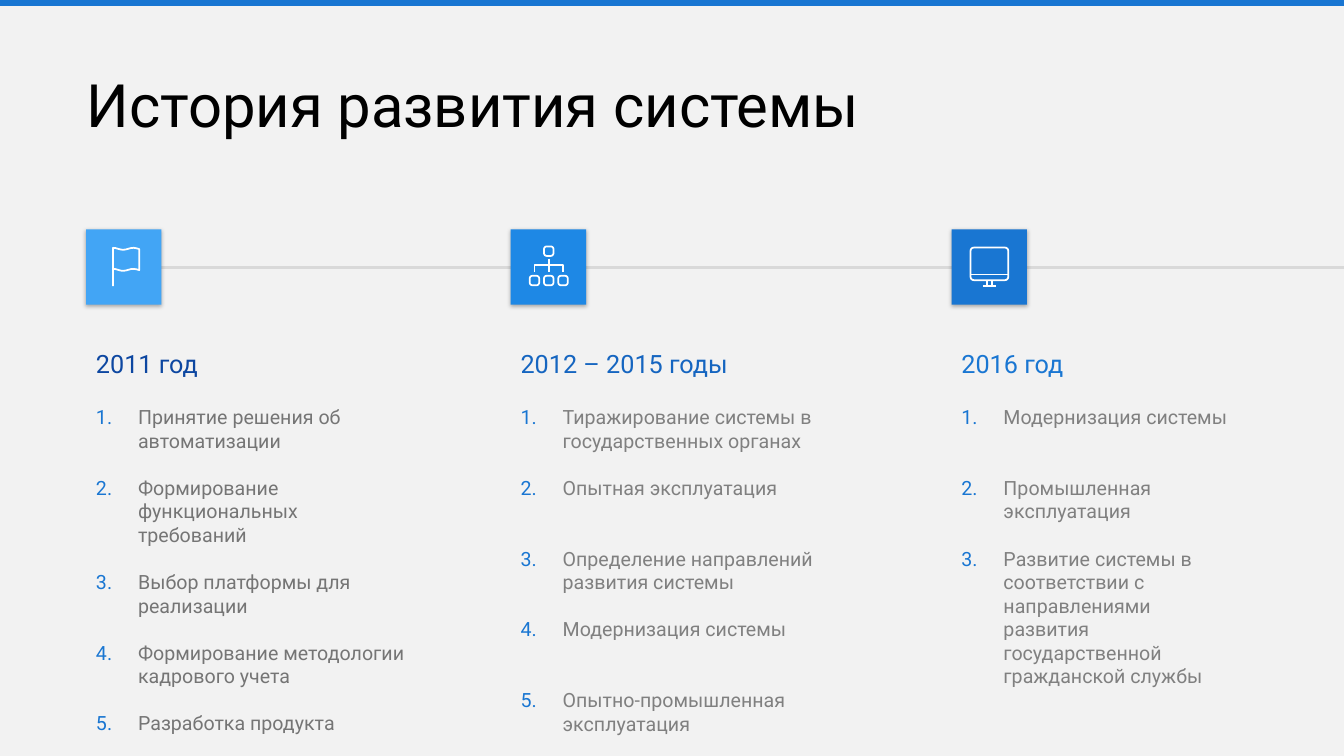
from math import cos, pi, sin

from lxml.etree import SubElement
from pptx import Presentation
from pptx.dml.color import RGBColor
from pptx.enum.shapes import MSO_CONNECTOR, MSO_SHAPE
from pptx.enum.text import MSO_ANCHOR, MSO_AUTO_SIZE, PP_ALIGN
from pptx.oxml.ns import qn
from pptx.util import Cm, Pt

COLORS = {
    "background": "F2F2F2", "bar": "1976D2", "title": "000000", "line": "D9D9D9",
    "number": "1976D2", "icon": "FFFFFF", "shadow": "000000",
}
TILE_TOP, TILE_SIZE = 5.78, 1.9
LINE_GAP = 16.9  # points, one empty line between list items


def write(paragraph, text, size, fill, space_before=0, numbered=False):
    paragraph.alignment = PP_ALIGN.LEFT
    paragraph.space_before = Pt(space_before)
    run = paragraph.add_run()
    run.text = text
    run.font.name = "Roboto"
    run.font.size = Pt(size)
    run.font.color.rgb = RGBColor.from_string(fill)
    if numbered:
        properties = paragraph._p.get_or_add_pPr()
        properties.set("marL", str(Cm(1.06)))
        properties.set("indent", str(-Cm(1.06)))
        number_color = SubElement(properties, qn("a:buClr"))
        SubElement(number_color, qn("a:srgbClr"), val=COLORS["number"])
        SubElement(properties, qn("a:buAutoNum"), type="arabicPeriod")


def rounded_box(left, top, width, height, radius):
    """Points of a closed box with round corners."""
    points = []
    for corner, (across, down) in enumerate([(1, 1), (0, 1), (0, 0), (1, 0)]):
        center_x = left + radius + across * (width - 2 * radius)
        center_y = top + radius + down * (height - 2 * radius)
        for step in range(5):
            angle = (corner + step / 4) * pi / 2
            points.append((center_x + radius * cos(angle), center_y + radius * sin(angle)))
    return points + points[:1]


# Icons: lists of strokes, in cm from the corner of the tile
wave = [(0.68 + 0.066 * step, 0.49 - 0.025 * cos(0.26 * pi * step)) for step in range(11)]
flag_icon = [[(0.68, 1.43)] + wave + [(x, y + 0.53) for x, y in reversed(wave)]]
chart_icon = [
    rounded_box(0.84, 0.43, 0.24, 0.24, 0.07),
    *[rounded_box(0.48 + 0.36 * index, 1.17, 0.24, 0.24, 0.07) for index in range(3)],
    [(0.6, 1.08), (0.6, 0.89), (1.32, 0.89), (1.32, 1.08)],
    [(0.96, 0.74), (0.96, 1.08)],
]
monitor_icon = [
    rounded_box(0.48, 0.46, 0.95, 0.82, 0.08),
    [(0.48, 1.14), (1.43, 1.14)],
    [(0.89, 1.28), (0.89, 1.42)],
    [(1.02, 1.28), (1.02, 1.42)],
    [(0.79, 1.42), (1.12, 1.42)],
]

# Stages: each item is (empty lines above, text)
stages = [
    {
        "left": 2.17, "tile": "42A5F5", "icon": flag_icon,
        "heading": "2011 год", "heading_color": "0D47A1", "heading_width": 3.18,
        "list_size": (8.36, 8.6), "list_color": "757575",
        "items": [
            (0, "Принятие решения об автоматизации"),
            (1, "Формирование функциональных требований"),
            (1, "Выбор платформы для реализации"),
            (1, "Формирование методологии кадрового учета"),
            (1, "Разработка продукта"),
        ],
    },
    {
        "left": 12.87, "tile": "1E88E5", "icon": chart_icon,
        "heading": "2012 – 2015 годы", "heading_color": "1565C0", "heading_width": 5.89,
        "list_size": (7.95, 8.6), "list_color": "808080",
        "items": [
            (0, "Тиражирование системы в государственных органах"),
            (1, "Опытная эксплуатация"),
            (2, "Определение направлений развития системы"),
            (1, "Модернизация системы"),
            (2, "Опытно-промышленная эксплуатация"),
        ],
    },
    {
        "left": 23.98, "tile": "1976D2", "icon": monitor_icon,
        "heading": "2016 год", "heading_color": "1976D2", "heading_width": 3.18,
        "list_size": (7.54, 7.4), "list_color": "808080",
        "items": [
            (0, "Модернизация системы"),
            (2, "Промышленная эксплуатация"),
            (1, "Развитие системы в соответствии с направлениями развития "
                "государственной гражданской службы"),
        ],
    },
]

presentation = Presentation()
presentation.slide_width, presentation.slide_height = Cm(33.87), Cm(19.05)
slide = presentation.slides.add_slide(presentation.slide_layouts[5])
slide.background.fill.solid()
slide.background.fill.fore_color.rgb = RGBColor.from_string(COLORS["background"])
shapes = slide.shapes

# Top bar
bar = shapes.add_shape(MSO_SHAPE.RECTANGLE, 0, 0, Cm(33.87), Cm(0.15))
bar.shadow.inherit = False
bar.fill.solid()
bar.fill.fore_color.rgb = RGBColor.from_string(COLORS["bar"])
bar.line.fill.background()

# Title
title = shapes.title
title.left, title.top, title.width, title.height = Cm(1.93), Cm(1.57), Cm(25.81), Cm(2.06)
title.text_frame.auto_size = MSO_AUTO_SIZE.NONE
title.text_frame.vertical_anchor = MSO_ANCHOR.TOP
write(title.text_frame.paragraphs[0], "История развития системы", 42.7, COLORS["title"])

# Timeline
timeline = shapes.add_connector(MSO_CONNECTOR.STRAIGHT, Cm(4.06), Cm(6.74), Cm(33.87), Cm(6.74))
timeline.line.color.rgb = RGBColor.from_string(COLORS["line"])
timeline.line.width = Pt(2)
SubElement(timeline._element.spPr, qn("a:effectLst"))

for stage in stages:
    left = stage["left"]

    # Tile with a soft shadow
    tile = shapes.add_shape(MSO_SHAPE.RECTANGLE, Cm(left), Cm(TILE_TOP), Cm(TILE_SIZE), Cm(TILE_SIZE))
    tile.fill.solid()
    tile.fill.fore_color.rgb = RGBColor.from_string(stage["tile"])
    tile.line.fill.background()
    tile.shadow.inherit = False
    effects = tile._element.spPr.find(qn("a:effectLst"))
    shadow = SubElement(effects, qn("a:outerShdw"), blurRad=str(Pt(3)), dist=str(Pt(1)),
                        dir="5400000", algn="t", rotWithShape="0")
    shadow_color = SubElement(shadow, qn("a:srgbClr"), val=COLORS["shadow"])
    SubElement(shadow_color, qn("a:alpha"), val="30000")

    # Icon, one outline made of all its strokes
    strokes = [[(Cm(left + x), Cm(TILE_TOP + y)) for x, y in stroke] for stroke in stage["icon"]]
    builder = shapes.build_freeform(*strokes[0][0])
    builder.add_line_segments(strokes[0][1:], close=False)
    for stroke in strokes[1:]:
        builder.move_to(*stroke[0])
        builder.add_line_segments(stroke[1:], close=False)
    icon = builder.convert_to_shape()
    icon.shadow.inherit = False
    icon.fill.background()
    icon.line.color.rgb = RGBColor.from_string(COLORS["icon"])
    icon.line.width = Pt(1.25)

    # Heading
    heading = shapes.add_textbox(Cm(left), Cm(8.66), Cm(stage["heading_width"]), Cm(1.03))
    heading.text_frame.word_wrap = False
    write(heading.text_frame.paragraphs[0], stage["heading"], 18, stage["heading_color"])

    # Numbered list
    width, height = stage["list_size"]
    frame = shapes.add_textbox(Cm(left), Cm(10.08), Cm(width), Cm(height)).text_frame
    frame.word_wrap = True
    for index, (gap, text) in enumerate(stage["items"]):
        paragraph = frame.add_paragraph() if index else frame.paragraphs[0]
        write(paragraph, text, 14, stage["list_color"], space_before=gap * LINE_GAP, numbered=True)

presentation.save("out.pptx")
